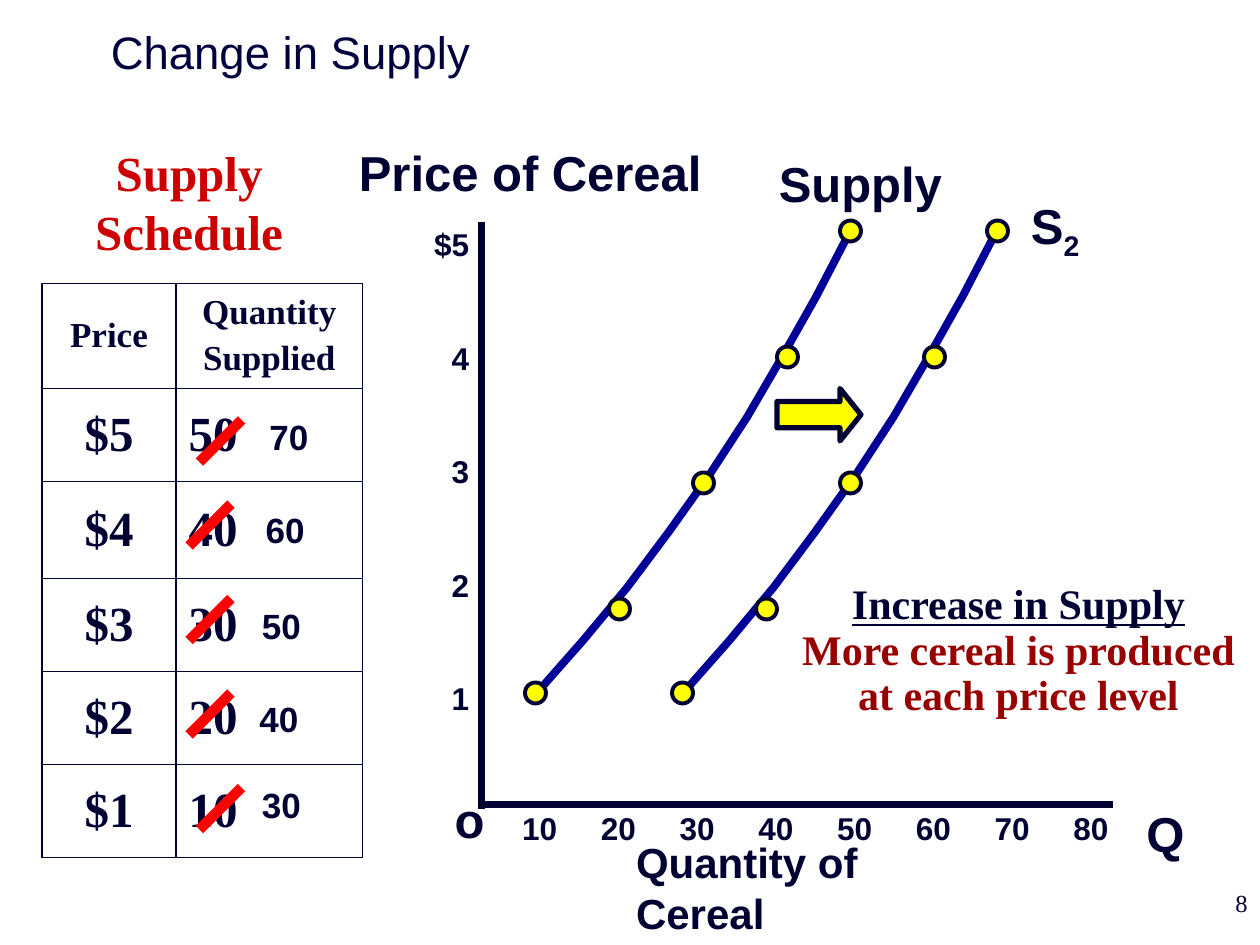
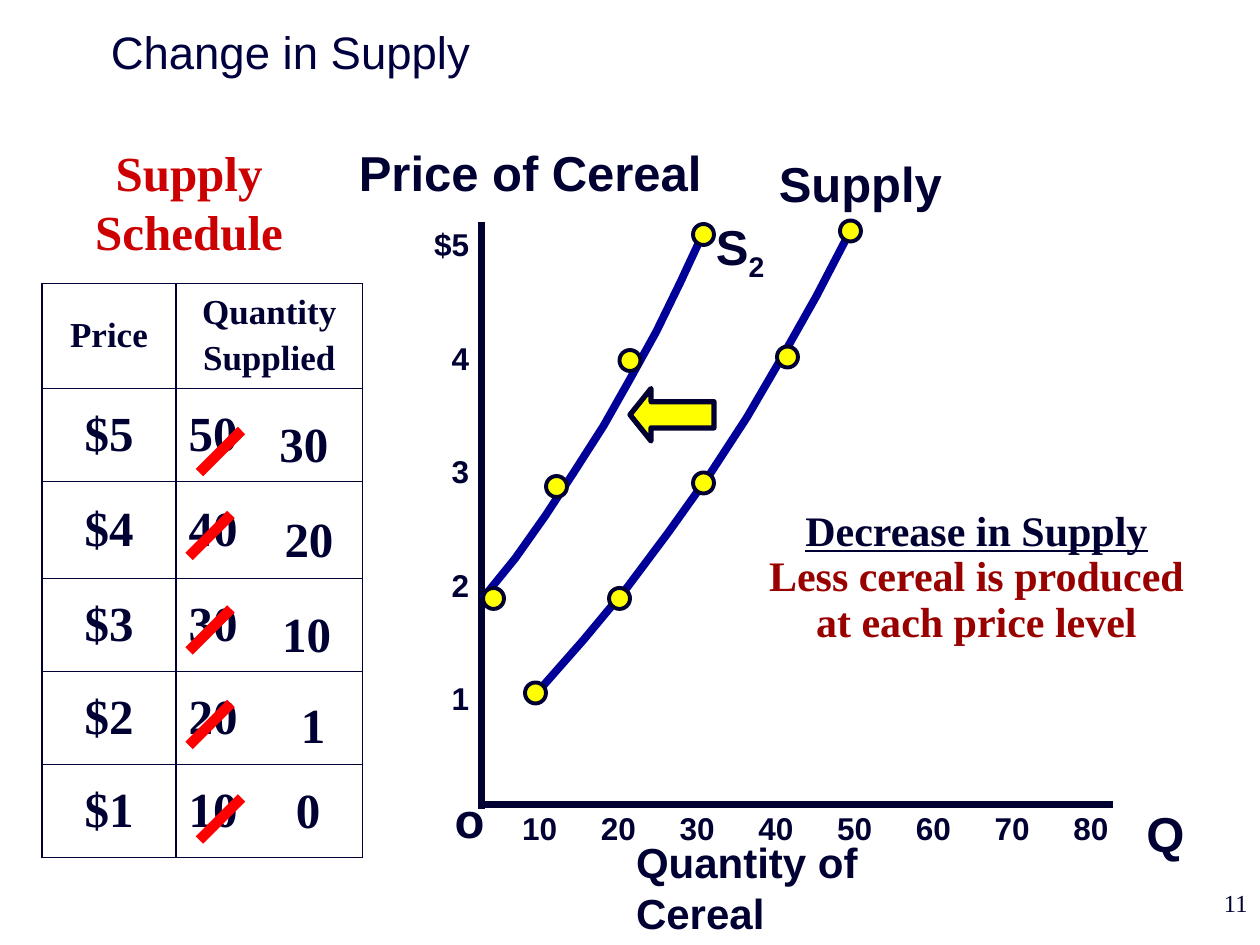
"""Build two slides on supply shifts: an increase and a decrease in supply."""
from dataclasses import dataclass
from typing import NamedTuple

from lxml.etree import SubElement
from pptx import Presentation
from pptx.dml.color import RGBColor
from pptx.enum.shapes import MSO_CONNECTOR, MSO_SHAPE
from pptx.enum.text import MSO_ANCHOR, PP_ALIGN
from pptx.oxml.ns import qn
from pptx.slide import Slide
from pptx.text.text import Font, TextFrame
from pptx.util import Pt

COLORS = {
    "ink": "000032",
    "title": "00003E",
    "curve": "000099",
    "schedule": "CC0000",
    "effect": "990000",
    "strike": "FF0000",
    "marker": "FFFF00",
}
SANS, SERIF = "Arial", "Times New Roman"
MARKER_SIZE = 12
QUANTITY_STEP = 45
PRICES = ["$5", "$4", "$3", "$2", "$1"]
QUANTITIES = ["50", "40", "30", "20", "10"]
COLUMN_WIDTHS = [76.6, 106.6]
ROW_HEIGHTS = [60, 53.2, 55.4, 53.2, 53.2, 53.2]
STRIKE_STARTS = [(114, 264), (108, 312), (108, 366), (108, 420), (114, 474)]


class Point(NamedTuple):
    x: float
    y: float


class Style(NamedTuple):
    size: float
    face: str = SANS
    color: str = "ink"
    bold: bool = True


class Label(NamedTuple):
    text: str
    left: float
    top: float
    width: float
    height: float
    style: Style
    align: PP_ALIGN = PP_ALIGN.LEFT
    anchor: MSO_ANCHOR = MSO_ANCHOR.TOP
    wrap: bool = True


@dataclass
class Shift:
    page: str
    heading: str
    effect: str
    effect_at: Point
    curve: list[Point]
    markers: list[Point]
    supply_markers: list[Point]
    name_at: Point
    arrow_at: Point
    arrow_turn: float
    strike_drop: float
    new_style: Style
    new_quantities: dict[Point, str]


def points(*pairs: tuple[float, float]) -> list[Point]:
    """Turn coordinate pairs into points."""
    return [Point(*pair) for pair in pairs]


def moved(places: list[Point], distance: float) -> list[Point]:
    """Move points to the right."""
    return [Point(place.x + distance, place.y) for place in places]


SUPPLY_CURVE = points(
    (307.4, 395.3), (333.4, 365.8), (358.6, 335.5), (382.3, 303.8), (405.4, 271.4),
    (427, 238.3), (447.1, 203.8), (466.6, 169.2), (485.3, 133.2))
SUPPLY_MARKERS = points((300, 390), (348, 342), (396, 270), (444, 198), (480, 126))

BIG = Style(28)
SHARED_LABELS = [
    Label("Change in Supply", 56.2, 0, 660, 59, Style(26, color="title", bold=False),
          anchor=MSO_ANCHOR.MIDDLE),
    Label("Q", 648, 455.8, 36, 41, BIG, wrap=False),
    Label("o", 252.7, 447.8, 31.7, 41, BIG, wrap=False),
    Label("Price of Cereal", 198, 77.8, 211, 41, BIG, anchor=MSO_ANCHOR.MIDDLE, wrap=False),
    Label("Quantity of Cereal", 356.4, 475, 150, 64, Style(24), anchor=MSO_ANCHOR.MIDDLE),
    Label("Supply Schedule", 24, 77.8, 168, 74, Style(28, SERIF, "schedule"), PP_ALIGN.CENTER),
    Label("Supply", 438, 84.2, 108, 41, BIG, wrap=False),
]

SHIFTS = [
    Shift(
        page="8",
        heading="Increase in Supply",
        effect="More cereal is produced at each price level",
        effect_at=Point(444, 330),
        curve=moved(SUPPLY_CURVE, 83.6),
        markers=moved(SUPPLY_MARKERS, 84),
        supply_markers=SUPPLY_MARKERS,
        name_at=Point(582, 108),
        arrow_at=Point(444, 222),
        arrow_turn=0,
        strike_drop=0,
        new_style=Style(20),
        new_quantities={
            Point(146.9, 234): "70", Point(144.7, 287.3): "60", Point(142.6, 342): "50",
            Point(141.1, 395.3): "40", Point(142.6, 444.2): "30"},
    ),
    Shift(
        page="11",
        heading="Decrease in Supply",
        effect="Less cereal is produced at each price level",
        effect_at=Point(420, 288),
        curve=points(
            (275.8, 342), (294.5, 319), (311.8, 294.5), (328.3, 269.3), (344.9, 243.4),
            (360, 216.7), (375.1, 189.4), (388.8, 161.3), (402.5, 131.8)),
        markers=points((276, 336), (312, 272), (354, 200), (396, 128)),
        supply_markers=[Point(348, 336) if place.x == 348 else place for place in SUPPLY_MARKERS],
        name_at=Point(402, 120),
        arrow_at=Point(360, 222),
        arrow_turn=180,
        strike_drop=6,
        new_style=Style(28, SERIF),
        new_quantities={
            Point(152.6, 232.6): "30", Point(155.5, 287.3): "20", Point(154.1, 341.3): "10",
            Point(164.9, 393.1): "1", Point(162, 442.1): "0"},
    ),
]


def rgb(name: str) -> RGBColor:
    """Look up a colour by name."""
    return RGBColor.from_string(COLORS[name])


def set_font(font: Font, style: Style) -> None:
    """Apply a text style to a font."""
    font.name, font.size, font.bold = style.face, Pt(style.size), style.bold
    font.color.rgb = rgb(style.color)


def add_label(slide: Slide, label: Label) -> TextFrame:
    """Add a text box and return its text frame."""
    frame = slide.shapes.add_textbox(
        Pt(label.left), Pt(label.top), Pt(label.width), Pt(label.height)).text_frame
    frame.word_wrap = label.wrap
    frame.vertical_anchor = label.anchor
    frame.text = label.text
    for paragraph in frame.paragraphs:
        paragraph.alignment = label.align
        set_font(paragraph.font, label.style)
    return frame


def add_line(slide: Slide, start: Point, end: Point, color: str, width: float) -> None:
    """Draw a straight line without a shadow."""
    line = slide.shapes.add_connector(
        MSO_CONNECTOR.STRAIGHT, Pt(start.x), Pt(start.y), Pt(end.x), Pt(end.y))
    line.line.color.rgb = rgb(color)
    line.line.width = Pt(width)
    SubElement(line._element.spPr, qn("a:effectLst"))


def add_curve(slide: Slide, places: list[Point]) -> None:
    """Draw an open supply curve."""
    builder = slide.shapes.build_freeform(Pt(places[0].x), Pt(places[0].y))
    builder.add_line_segments([(Pt(x), Pt(y)) for x, y in places[1:]], close=False)
    curve = builder.convert_to_shape()
    curve.shadow.inherit = False
    curve.fill.background()
    curve.line.color.rgb = rgb("curve")
    curve.line.width = Pt(4.5)


def add_yellow(slide: Slide, preset: MSO_SHAPE, at: Point, width: float, height: float,
               outline: float, turn: float = 0) -> None:
    """Draw a yellow marker or arrow."""
    mark = slide.shapes.add_shape(preset, Pt(at.x), Pt(at.y), Pt(width), Pt(height))
    mark.shadow.inherit = False
    mark.fill.solid()
    mark.fill.fore_color.rgb = rgb("marker")
    mark.line.color.rgb = rgb("ink")
    mark.line.width = Pt(outline)
    mark.rotation = turn
    if preset == MSO_SHAPE.RIGHT_ARROW:
        mark.adjustments[0], mark.adjustments[1] = 0.5, 0.4


def add_markers(slide: Slide, places: list[Point]) -> None:
    """Mark the schedule's points on a curve."""
    for place in places:
        add_yellow(slide, MSO_SHAPE.OVAL, place, MARKER_SIZE, MARKER_SIZE, 2.25)


def add_axes(slide: Slide) -> None:
    """Draw both axes with their values."""
    add_line(slide, Point(275, 126.7), Point(275, 462.2), "ink", 4)
    add_line(slide, Point(273, 460), Point(635.8, 460), "ink", 4)
    prices = add_label(slide, Label("$5\n4\n3\n2\n1", 240.5, 125.3, 34.6, 289, Style(18),
                                    PP_ALIGN.RIGHT, wrap=False))
    for index, price in enumerate(prices.paragraphs):
        price.line_spacing = Pt(21.6)
        price.space_before = Pt(43.2 if index else 0)

    frame = add_label(slide, Label("", 291.2, 458.6, 356.4, 29, Style(18)))
    quantities = frame.paragraphs[0]
    quantities.text = "\t".join(str(value) for value in range(10, 90, 10))
    properties = quantities._p.get_or_add_pPr()
    for old in list(properties):
        properties.remove(old)
    stops = SubElement(properties, qn("a:tabLst"))
    for step in range(1, 8):
        SubElement(stops, qn("a:tab"), pos=str(Pt(QUANTITY_STEP * step)), algn="l")
    set_font(quantities.font, Style(18))


def add_schedule(slide: Slide) -> None:
    """Add the table of prices and quantities supplied."""
    table = slide.shapes.add_table(
        len(ROW_HEIGHTS), len(COLUMN_WIDTHS), Pt(24), Pt(162),
        Pt(sum(COLUMN_WIDTHS)), Pt(sum(ROW_HEIGHTS))).table
    table.first_row = table.horz_banding = False
    for column, width in zip(table.columns, COLUMN_WIDTHS):
        column.width = Pt(width)
    entries = [("Price", "Quantity\nSupplied"), *zip(PRICES, QUANTITIES)]
    for row_index, (row, texts) in enumerate(zip(table.rows, entries)):
        row.height = Pt(ROW_HEIGHTS[row_index])
        for column_index, text in enumerate(texts):
            cell = table.cell(row_index, column_index)
            cell.text = text
            cell.vertical_anchor = MSO_ANCHOR.MIDDLE
            for index, paragraph in enumerate(cell.text_frame.paragraphs):
                is_quantity = row_index > 0 and column_index == 1
                paragraph.alignment = PP_ALIGN.LEFT if is_quantity else PP_ALIGN.CENTER
                paragraph.space_before = Pt(4 if index else 0)
                set_font(paragraph.font, Style(28 if row_index else 20, SERIF))
            properties = cell._tc.get_or_add_tcPr()
            for side in ("lnL", "lnR", "lnT", "lnB"):
                border = SubElement(properties, qn(f"a:{side}"), w=str(Pt(1)))
                SubElement(SubElement(border, qn("a:solidFill")), qn("a:srgbClr"),
                           val=COLORS["ink"])
            cell.fill.background()


def add_shift(slide: Slide, shift: Shift) -> None:
    """Add the new curve, the new quantities and the explanation."""
    add_curve(slide, shift.curve)
    add_markers(slide, shift.markers)
    name = add_label(slide, Label("S", *shift.name_at, 44, 41, BIG, wrap=False))
    subscript = name.paragraphs[0].add_run()
    subscript.text = "2"
    subscript._r.get_or_add_rPr().set("baseline", "-25000")
    add_yellow(slide, MSO_SHAPE.RIGHT_ARROW, shift.arrow_at, 48, 30, 3, shift.arrow_turn)

    add_schedule(slide)
    for x, y in STRIKE_STARTS:
        bottom = y + shift.strike_drop
        add_line(slide, Point(x, bottom), Point(x + 24, bottom - 24), "strike", 6)
    for place, quantity in shift.new_quantities.items():
        add_label(slide, Label(quantity, *place, 48, 36, shift.new_style))

    frame = add_label(slide, Label(f"{shift.heading}\n{shift.effect}", *shift.effect_at,
                                   276, 86, Style(24, SERIF), PP_ALIGN.CENTER))
    heading, effect = frame.paragraphs
    heading.line_spacing = effect.line_spacing = 0.9
    heading.font.underline = True
    effect.font.color.rgb = rgb("effect")


def main() -> None:
    """Build and save the slides."""
    deck = Presentation()
    deck.slide_width, deck.slide_height = Pt(720), Pt(540)
    for shift in SHIFTS:
        slide = deck.slides.add_slide(deck.slide_layouts[6])
        add_curve(slide, SUPPLY_CURVE)
        add_axes(slide)
        page = Label(shift.page, 570, 504, 150, 36, Style(14, SERIF, bold=False), PP_ALIGN.RIGHT)
        for label in [*SHARED_LABELS, page]:
            add_label(slide, label)
        add_markers(slide, shift.supply_markers)
        add_shift(slide, shift)
    deck.save("out.pptx")


if __name__ == "__main__":
    main()
